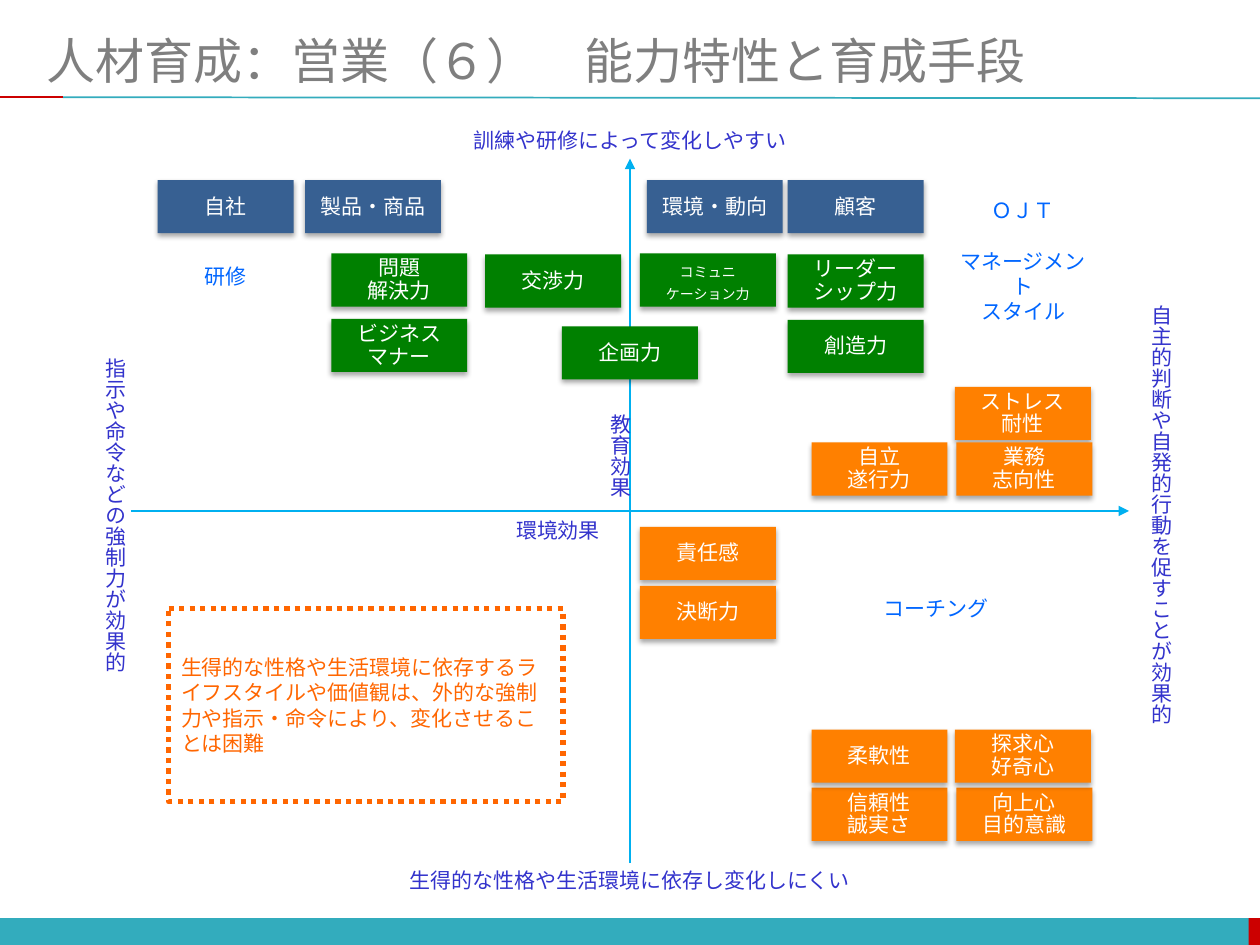
from pptx import Presentation
from pptx import util as u
from pptx.dml.color import RGBColor
from pptx.enum import dml, shapes, text
from pptx.oxml import parse_xml
from pptx.oxml.ns import nsdecls, qn
from lxml import etree

TEAL = RGBColor(0x33, 0xAC, 0xBD)
RED = RGBColor(0xCC, 0x00, 0x00)
GRAY = RGBColor(0x7F, 0x7F, 0x7F)
SKY = RGBColor(0x00, 0xB0, 0xF0)
INDIGO = RGBColor(0x33, 0x33, 0xCC)
BLUE = RGBColor(0x00, 0x66, 0xFF)
NAVY = RGBColor(0x37, 0x60, 0x92)
GREEN = RGBColor(0x00, 0x80, 0x00)
ORANGE = RGBColor(0xFF, 0x80, 0x00)
DARK_ORANGE = RGBColor(0xFF, 0x66, 0x00)
WHITE = RGBColor(0xFF, 0xFF, 0xFF)

JP = "Noto Sans CJK JP"
LEFT, CENTER = text.PP_ALIGN.LEFT, text.PP_ALIGN.CENTER
CARD_W, CARD_H = 2.74, 1.07

KNOWLEDGE = [
    (2.97, 0, "製品・商品"),
    (0, 0, "自社"),
    (9.86, 0, "環境・動向"),
    (12.7, 0, "顧客"),
]
ATTITUDES = [
    (16.1, 12.25, "向上心\n目的意識"),
    (16.07, 11.08, "探求心\n好奇心"),
    (13.18, 5.29, "自立\n遂行力"),
    (16.07, 4.17, "ストレス\n耐性"),
    (16.1, 5.29, "業務\n志向性"),
    (9.72, 6.99, "責任感"),
    (13.18, 12.25, "信頼性\n誠実さ"),
    (13.18, 11.08, "柔軟性"),
    (9.72, 8.18, "決断力"),
]
SKILLS = [
    (3.5, 2.8, "ビジネス\nマナー"),
    (3.5, 1.48, "問題\n解決力"),
    (6.6, 1.5, "交渉力"),
    (9.72, 1.48, "コミュニ\nケーション力"),
    (12.7, 1.5, "リーダー\nシップ力"),
    (8.15, 2.95, "企画力"),
    (12.7, 2.82, "創造力"),
]


def write(sp, content, color, size=12, font=JP, align=CENTER, spacing=None, gap=None):
    tf = sp.text_frame
    for i, line in enumerate(content.split("\n")):
        p = tf.paragraphs[0] if i == 0 else tf.add_paragraph()
        p.alignment = align
        if spacing:
            p.line_spacing = u.Pt(spacing)
        if gap and i == 1:
            p.space_before = u.Pt(gap)
        r = p.add_run()
        r.text = line
        r.font.size = u.Pt(size)
        r.font.name = font
        r.font.color.rgb = color
        ea = etree.SubElement(r.font._element, qn("a:ea"))
        ea.set("typeface", JP)


def label(s, x, y, w, h, content, color, wrap=True, vertical=False, grow=True, **fmt):
    sp = s.shapes.add_textbox(u.Cm(x), u.Cm(y), u.Cm(w), u.Cm(h))
    tf = sp.text_frame
    tf.word_wrap = wrap
    if grow:
        tf.auto_size = text.MSO_AUTO_SIZE.SHAPE_TO_FIT_TEXT
    else:
        tf.vertical_anchor = text.MSO_ANCHOR.MIDDLE
    if vertical:
        tf._txBody.bodyPr.set("vert", "eaVert")
    write(sp, content, color, **fmt)


def block(s, x, y, w, h, fill, kind=shapes.MSO_SHAPE.RECTANGLE):
    sp = s.shapes.add_shape(kind, u.Cm(x), u.Cm(y), u.Cm(w), u.Cm(h))
    sp.shadow.inherit = False
    sp.fill.solid()
    sp.fill.fore_color.rgb = fill
    sp.line.fill.background()
    if kind == shapes.MSO_SHAPE.ROUNDED_RECTANGLE:
        sp.adjustments[0] = 0
    sp.text_frame.word_wrap = True
    sp.text_frame.vertical_anchor = text.MSO_ANCHOR.MIDDLE
    return sp


def rule(s, x1, y1, x2, y2, color, width=1, arrow=False):
    c = s.shapes.add_connector(
        shapes.MSO_CONNECTOR.STRAIGHT, u.Cm(x1), u.Cm(y1), u.Cm(x2), u.Cm(y2))
    c.line.color.rgb = color
    c.line.width = u.Pt(width)
    if arrow:
        etree.SubElement(c.line._get_or_add_ln(), qn("a:tailEnd")).set("type", "triangle")
    etree.SubElement(c._element.spPr, qn("a:effectLst"))


def card(s, x, y, content, fill):
    sp = block(s, x, y, CARD_W, CARD_H, fill, shapes.MSO_SHAPE.ROUNDED_RECTANGLE)
    sp._element.spPr.find(qn("a:effectLst")).append(parse_xml(
        f'<a:outerShdw {nsdecls("a")} blurRad="{u.Pt(3.1)}" dist="{u.Pt(1.8)}" '
        'dir="5400000" rotWithShape="0"><a:srgbClr val="000000">'
        '<a:alpha val="35000"/></a:srgbClr></a:outerShdw>'))
    size = 8 if content.startswith("コミュニ") else 12
    write(sp, content, WHITE, size=size, spacing=None if fill == NAVY else 13)


def header(s, x, y, w, h):
    rule(s, x + 1.27, y + h - 0.02, x + w, y + h, TEAL)
    rule(s, x, y + h - 0.02, x + 1.27, y + h - 0.02, RED)
    label(s, x + 0.69, y + 0.56, 22.58, 1.3, "人材育成：営業（６）　能力特性と育成手段",
          GRAY, grow=False, size=28, font="Calibri", align=LEFT)


def footer(s, x, y, w, h):
    block(s, x, y, w, h, TEAL)
    block(s, x + w - 0.23, y, 0.23, h, RED)


def axes(s, x, y, w, h):
    mid_x, mid_y = x + w / 2, y + h / 2
    rule(s, mid_x, y + h, mid_x, y, SKY, 1.5, arrow=True)
    rule(s, x, mid_y, x + w, mid_y, SKY, 1.5, arrow=True)
    label(s, mid_x - 0.84, mid_y - 2.21, 1.02, 1.96, "教育効果", INDIGO,
          wrap=False, vertical=True, align=LEFT)
    label(s, mid_x - 2.72, mid_y, 2.54, 0.76, "環境効果", INDIGO)
    for top, width, content in [
        (y - 0.76, 6.94, "訓練や研修によって変化しやすい"),
        (y + h - 0.03, 9.5, "生得的な性格や生活環境に依存し変化しにくい"),
    ]:
        label(s, mid_x - width / 2, top, width, 0.76, content, INDIGO, wrap=False)
    for left, height, content in [
        (x - 0.96, 6.68, "指示や命令などの強制力が効果的"),
        (x + w, 8.82, "自主的判断や自発的行動を促すことが効果的"),
    ]:
        label(s, left, mid_y - height / 2, 1.02, height, content, INDIGO,
              wrap=False, vertical=True)


def abilities(s, x, y):
    for cards, fill in [(KNOWLEDGE, NAVY), (ATTITUDES, ORANGE), (SKILLS, GREEN)]:
        for dx, dy, content in cards:
            card(s, x + dx, y + dy, content, fill)


def methods(s, x, y):
    label(s, x + 13.18, y + 8.26, 5.03, 0.76, "コーチング", BLUE)
    label(s, x - 0.36, y + 1.55, 3.45, 0.76, "研修", BLUE)
    label(s, x + 15.72, y + 0.23, 3.45, 2.31, "ＯＪＴ\nマネージメント\nスタイル", BLUE, gap=14.5)


def remark(s, x, y, w, h):
    sp = block(s, x, y, w, h, WHITE, shapes.MSO_SHAPE.ROUNDED_RECTANGLE)
    sp.line.color.rgb = DARK_ORANGE
    sp.line.width = u.Pt(3)
    sp.line.dash_style = dml.MSO_LINE.ROUND_DOT
    write(sp, "生得的な性格や生活環境に依存するライフスタイルや価値観は、外的な強制力や指示・命令により、変化させることは困難",
          DARK_ORANGE, align=LEFT)


def main():
    prs = Presentation()
    prs.slide_width, prs.slide_height = u.Cm(25.4), u.Cm(19.05)
    s = prs.slides.add_slide(prs.slide_layouts[6])
    footer(s, 0, 18.51, 25.4, 0.55)
    header(s, 0, 0, 25.4, 1.98)
    axes(s, 2.64, 3.2, 20.12, 14.2)
    abilities(s, 3.18, 3.63)
    methods(s, 3.18, 3.63)
    remark(s, 3.4, 12.27, 7.95, 3.89)
    prs.save("out.pptx")


if __name__ == "__main__":
    main()
